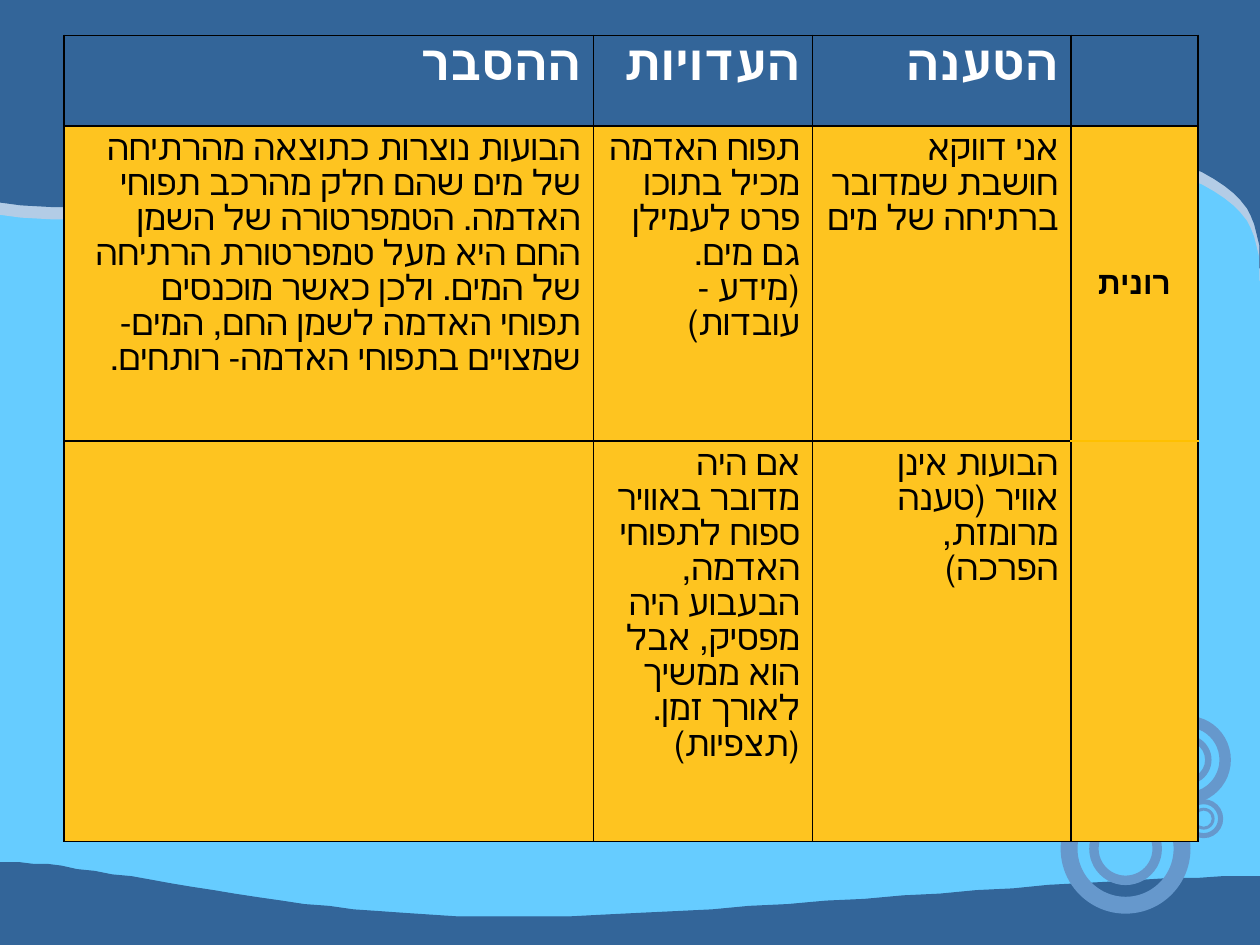
from lxml import etree
from pptx import Presentation
from pptx.dml.color import RGBColor
from pptx.enum import shapes, text
from pptx.oxml import ns
from pptx.util import Pt

NAVY, SKY, STEEL, GOLD = "336599", "66CCFF", "6698CC", "FEC420"
BLACK, WHITE, AMBER = "000000", "FFFFFF", "FFC000"

# Waves: start point, then cubic curves (three points) and lines (one point)
FLOOR = ((-1.4, 493.2), [
    [(44.6, 490.3), (155.5, 522.7), (275.8, 524.2)],
    [(396, 525.6), (646.6, 499), (720.7, 501.1)],
    [(720, 540.7)], [(-0.7, 542.2)]])
ROOF = ((-2.2, -2.9), [
    [(724.3, -3.6)], [(724.3, 152.6)],
    [(708.5, 167.8), (751.7, 92.9), (630.7, 86.4)],
    [(509.8, 80.6), (103, 130.3), (-2.9, 115.2)]])
# Rings: centre x, centre y, outer diameter; each holds a smaller ring
RINGS = [(643.2, 485, 74.2), (687.8, 467.8, 22.3), (678.2, 434.2, 50.4)]

COLS = [302.4, 125.3, 147.6, 72.7]
ROWS = [51.8, 180, 229]
CELLS = [
    ["ההסבר", "העדויות", "הטענה", ""],
    ["הבועות נוצרות כתוצאה מהרתיחה של מים שהם חלק מהרכב תפוחי האדמה. "
     "הטמפרטורה של השמן החם היא מעל טמפרטורת הרתיחה של המים. ולכן כאשר "
     "מוכנסים תפוחי האדמה לשמן החם, המים- שמצויים בתפוחי האדמה- רותחים.",
     "תפוח האדמה מכיל בתוכו פרט לעמילן גם מים. (מידע - עובדות)",
     "אני דווקא חושבת שמדובר ברתיחה של מים", "רונית"],
    ["", "אם היה מדובר באוויר ספוח לתפוחי האדמה, הבעבוע היה מפסיק, "
     "אבל הוא ממשיך לאורך זמן. (תצפיות)",
     "הבועות אינן אוויר (טענה מרומזת, הפרכה)", ""],
]


def paint(fill, tone):
    fill.solid()
    fill.fore_color.rgb = RGBColor.from_string(tone)


def node(parent, tag, **attrs):
    return etree.SubElement(parent, ns.qn(tag), attrs)


def curve(start, ctrl, steps=24):
    """Points along a cubic Bezier curve, without its start."""
    pts = [start, *ctrl]
    for i in range(1, steps + 1):
        t = i / steps
        w = [(1 - t) ** 3, 3 * t * (1 - t) ** 2, 3 * t * t * (1 - t), t ** 3]
        yield tuple(sum(k * p[a] for k, p in zip(w, pts)) for a in (0, 1))


def wave(slide, start, parts):
    pts = [start]
    for part in parts:
        pts += curve(pts[-1], part) if len(part) == 3 else part
    form = slide.shapes.build_freeform(*start, scale=Pt(1))
    form.add_line_segments(pts[1:], close=True)
    shape = form.convert_to_shape()
    shape.shadow.inherit = False
    paint(shape.fill, NAVY)
    paint(shape.line.fill, NAVY)
    shape.line.width = Pt(0.75)
    return shape


def shade(shape, tone, drop):
    """Hard shadow straight below the shape."""
    fx = shape._element.spPr.find(ns.qn("a:effectLst"))
    shadow = node(fx, "a:outerShdw", blurRad="0", dist=str(Pt(drop)),
                  dir="5400000", algn="t", rotWithShape="0")
    node(shadow, "a:srgbClr", val=tone)


def ring(slide, x, y, size):
    shape = slide.shapes.add_shape(
        shapes.MSO_SHAPE.DONUT, Pt(x - size / 2), Pt(y - size / 2),
        Pt(size), Pt(size))
    shape.adjustments[0] = 0.13
    shape.shadow.inherit = False
    paint(shape.fill, STEEL)
    shape.line.fill.background()


def edge(cell, side, tone):
    line = node(cell._tc.get_or_add_tcPr(), "a:ln" + side, w=str(Pt(1)))
    node(node(line, "a:solidFill"), "a:srgbClr", val=tone)


def write(cell, words, size, bold, tone, align):
    para = cell.text_frame.paragraphs[0]
    para.alignment = align
    para._p.get_or_add_pPr().set("rtl", "1")
    run = para.add_run()
    run.text = words
    run.font.name = "Arial"
    run.font.size = Pt(size)
    run.font.bold = bold
    run.font.color.rgb = RGBColor.from_string(tone)
    return run


def grid(slide):
    table = slide.shapes.add_table(
        len(ROWS), len(COLS), Pt(36.7), Pt(20.2),
        Pt(sum(COLS)), Pt(sum(ROWS))).table
    table.first_row = table.horz_banding = False
    for col, width in zip(table.columns, COLS):
        col.width = Pt(width)
    for row, height in zip(table.rows, ROWS):
        row.height = Pt(height)
    right, mid = text.PP_ALIGN.RIGHT, text.PP_ALIGN.CENTER
    for r, line in enumerate(CELLS):
        for c, words in enumerate(line):
            cell = table.cell(r, c)
            name = c == len(COLS) - 1
            soft = {1: "B", 2: "T"}.get(r) if name else None
            for side in "LRTB":
                edge(cell, side, AMBER if side == soft else BLACK)
            if r:
                paint(cell.fill, GOLD)
            else:
                cell.fill.background()
            if not words:
                continue
            if r == 0:
                write(cell, words, 28, True, WHITE, right)
            elif name:
                cell.vertical_anchor = text.MSO_ANCHOR.MIDDLE
                run = write(cell, words, 18, True, BLACK, mid)
                node(run._r.get_or_add_rPr(), "a:cs", typeface="Arial")
            else:
                write(cell, words, 20, False, BLACK, right)


def main():
    deck = Presentation()
    deck.slide_width, deck.slide_height = Pt(720), Pt(540)
    slide = deck.slides.add_slide(deck.slide_layouts[6])
    paint(slide.background.fill, SKY)
    wave(slide, *FLOOR)
    shade(wave(slide, *ROOF), "B3CCE6", 7)
    for x, y, size in RINGS:
        ring(slide, x, y, size)
        ring(slide, x, y, size * 0.56)
    grid(slide)
    deck.save("out.pptx")


if __name__ == "__main__":
    main()
